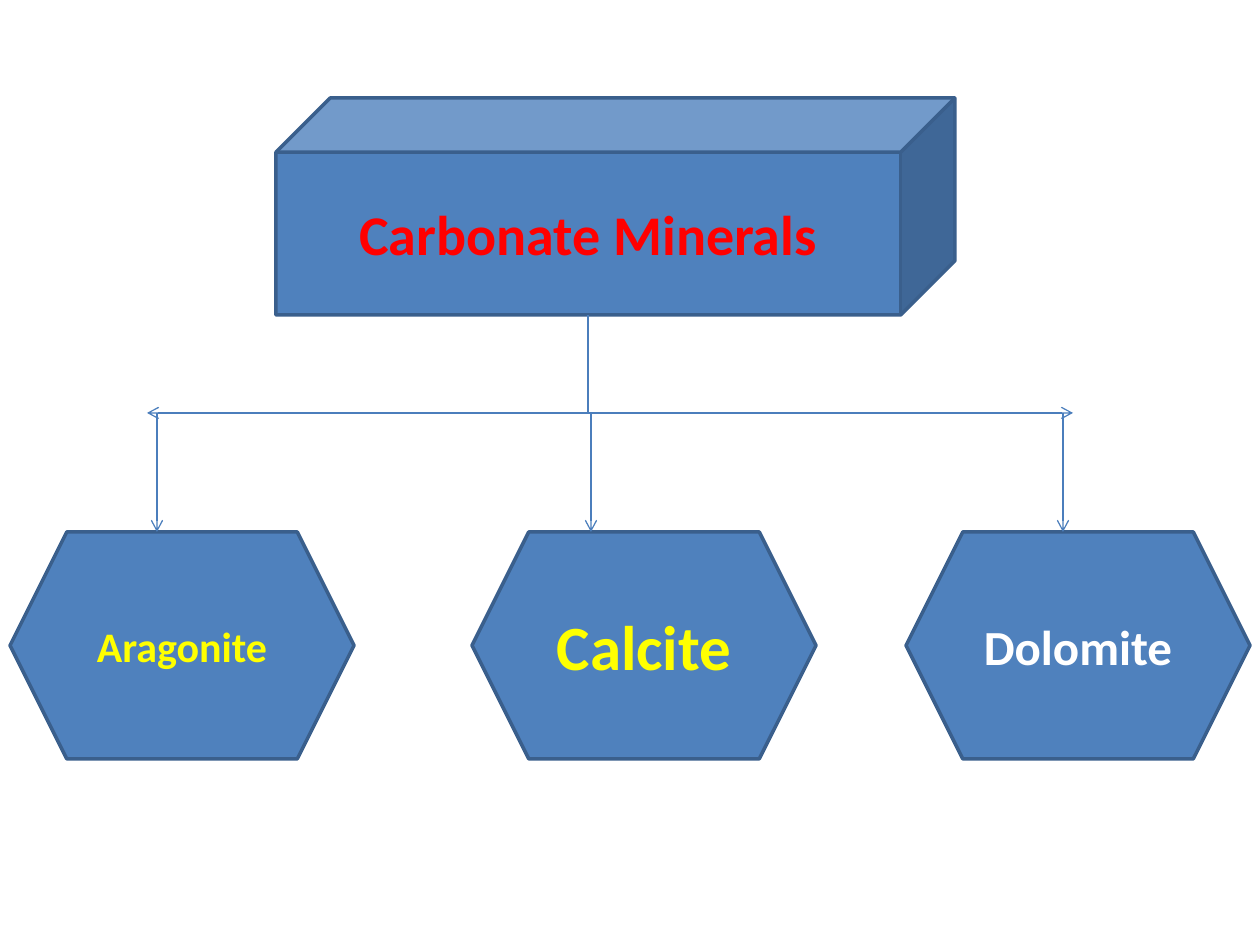
from dataclasses import dataclass

from lxml import etree
from pptx import Presentation
from pptx import util as u
from pptx.dml.color import RGBColor
from pptx.enum import shapes, text
from pptx.oxml.ns import qn

EMU_PER_PX = 914400 / 126


@dataclass(frozen=True)
class Theme:
    font: str = "Calibri"
    fill: str = "4F81BD"
    outline: str = "3A5F8C"
    connector: str = "4B7EBC"
    red: str = "FF0000"
    yellow: str = "FFFF00"
    white: str = "FFFFFF"
    outline_width: float = 2
    connector_width: float = 0.75
    heading: int = 32
    small: int = 24
    medium: int = 28
    large: int = 36


@dataclass(frozen=True)
class Node:
    label: str
    kind: shapes.MSO_SHAPE
    left: int
    top: int
    width: int
    height: int
    size: int
    color: str


THEME = Theme()
HEX_TOP, HEX_WIDTH, HEX_HEIGHT = 532, 344, 227
TRUNK_X, TRUNK_TOP, BRANCH_Y = 588, 315, 413
BRANCH_ENDS = (1073, 147)
ARROW_XS = (1063, 591, 157)


def mineral(label: str, left: int, size: int, color: str) -> Node:
    return Node(label, shapes.MSO_SHAPE.HEXAGON, left, HEX_TOP,
                HEX_WIDTH, HEX_HEIGHT, size, color)


NODES = (
    Node("Carbonate Minerals", shapes.MSO_SHAPE.CUBE, 276, 98, 679, 217,
         THEME.heading, THEME.red),
    mineral("Dolomite", 906, THEME.medium, THEME.white),
    mineral("Calcite", 472, THEME.large, THEME.yellow),
    mineral("Aragonite", 10, THEME.small, THEME.yellow),
)


def px(value: float) -> u.Emu:
    return u.Emu(round(value * EMU_PER_PX))


def rgb(color: str) -> RGBColor:
    return RGBColor.from_string(color)


def draw_node(page, node: Node) -> None:
    box = page.shapes.add_shape(node.kind, px(node.left), px(node.top),
                                px(node.width), px(node.height))
    box.shadow.inherit = False
    box.fill.solid()
    box.fill.fore_color.rgb = rgb(THEME.fill)
    box.line.color.rgb = rgb(THEME.outline)
    box.line.width = u.Pt(THEME.outline_width)
    frame = box.text_frame
    frame.word_wrap = True
    frame.vertical_anchor = text.MSO_ANCHOR.MIDDLE
    para = frame.paragraphs[0]
    para.text = node.label
    para.alignment = text.PP_ALIGN.CENTER
    para.font.name = THEME.font
    para.font.size = u.Pt(node.size)
    para.font.bold = True
    para.font.color.rgb = rgb(node.color)


def draw_arrow(page, kind: shapes.MSO_CONNECTOR, x1: float, y1: float,
               x2: float, y2: float):
    arrow = page.shapes.add_connector(kind, px(x1), px(y1), px(x2), px(y2))
    arrow.line.color.rgb = rgb(THEME.connector)
    arrow.line.width = u.Pt(THEME.connector_width)
    line = arrow.line._get_or_add_ln()
    etree.SubElement(line, qn("a:tailEnd"), type="arrow")
    etree.SubElement(arrow._element.spPr, qn("a:effectLst"))
    return arrow


def draw_branch(page, end_x: int) -> None:
    """Draw a one-bend connector: down the trunk, then sideways to end_x."""
    drop, reach = BRANCH_Y - TRUNK_TOP, abs(end_x - TRUNK_X)
    left = (TRUNK_X + end_x - drop) / 2
    top = (TRUNK_TOP + BRANCH_Y - reach) / 2
    branch = draw_arrow(page, shapes.MSO_CONNECTOR.ELBOW,
                        left, top, left + drop, top + reach)
    properties = branch._element.spPr
    properties.find(qn("a:prstGeom")).set("prst", "bentConnector2")
    frame = properties.find(qn("a:xfrm"))
    # A quarter turn makes the first leg vertical
    if end_x > TRUNK_X:
        frame.set("rot", str(270 * 60000))
        frame.set("flipH", "1")
    else:
        frame.set("rot", str(90 * 60000))


def main() -> None:
    deck = Presentation()
    deck.slide_width, deck.slide_height = px(1260), px(945)
    page = deck.slides.add_slide(deck.slide_layouts[6])

    # Heading block and the three minerals
    for node in NODES:
        draw_node(page, node)

    # Trunk with its two side branches
    for end_x in BRANCH_ENDS:
        draw_branch(page, end_x)

    # Arrows down to the minerals
    for x in ARROW_XS:
        draw_arrow(page, shapes.MSO_CONNECTOR.STRAIGHT, x, BRANCH_Y, x, HEX_TOP)

    deck.save("out.pptx")


if __name__ == "__main__":
    main()
